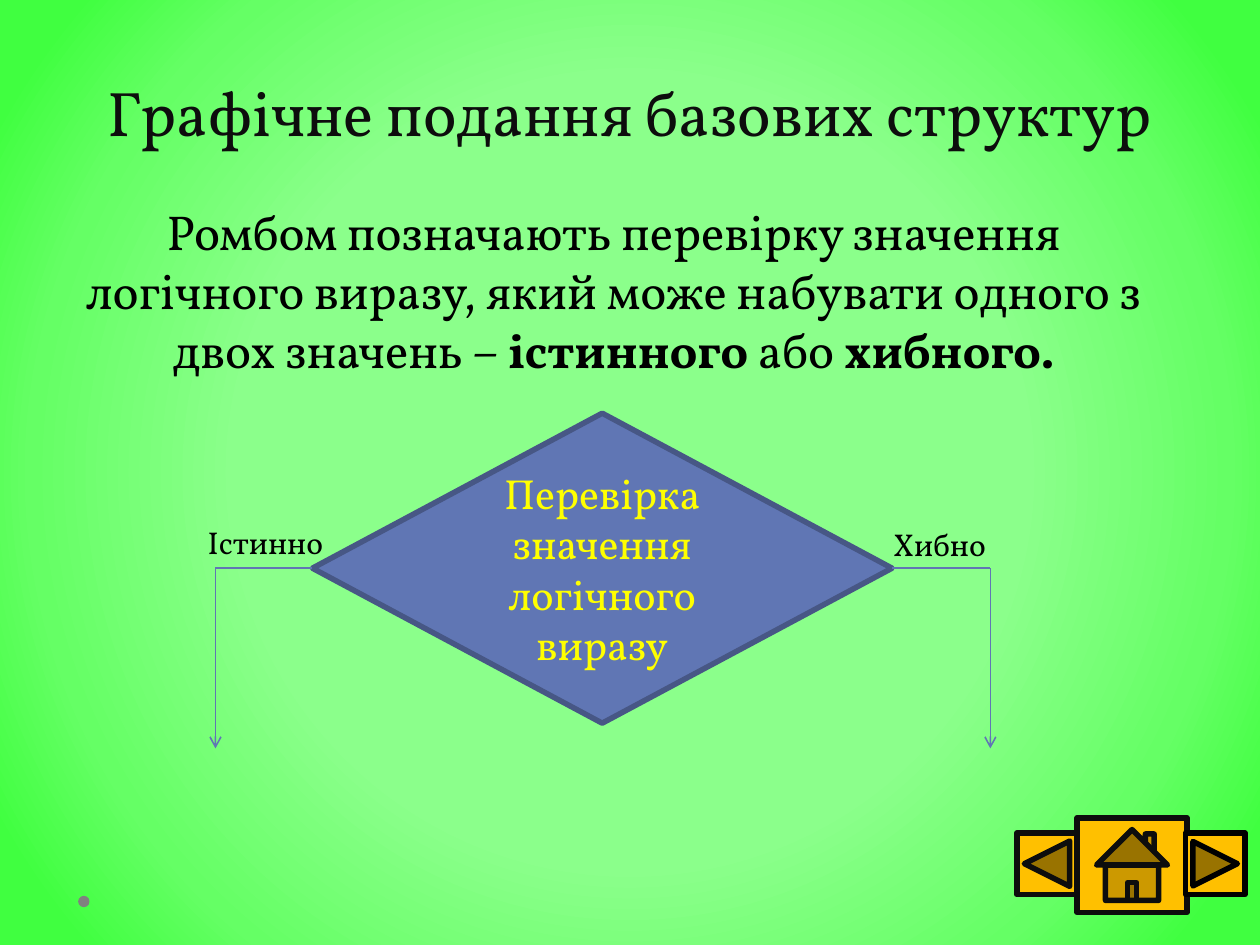
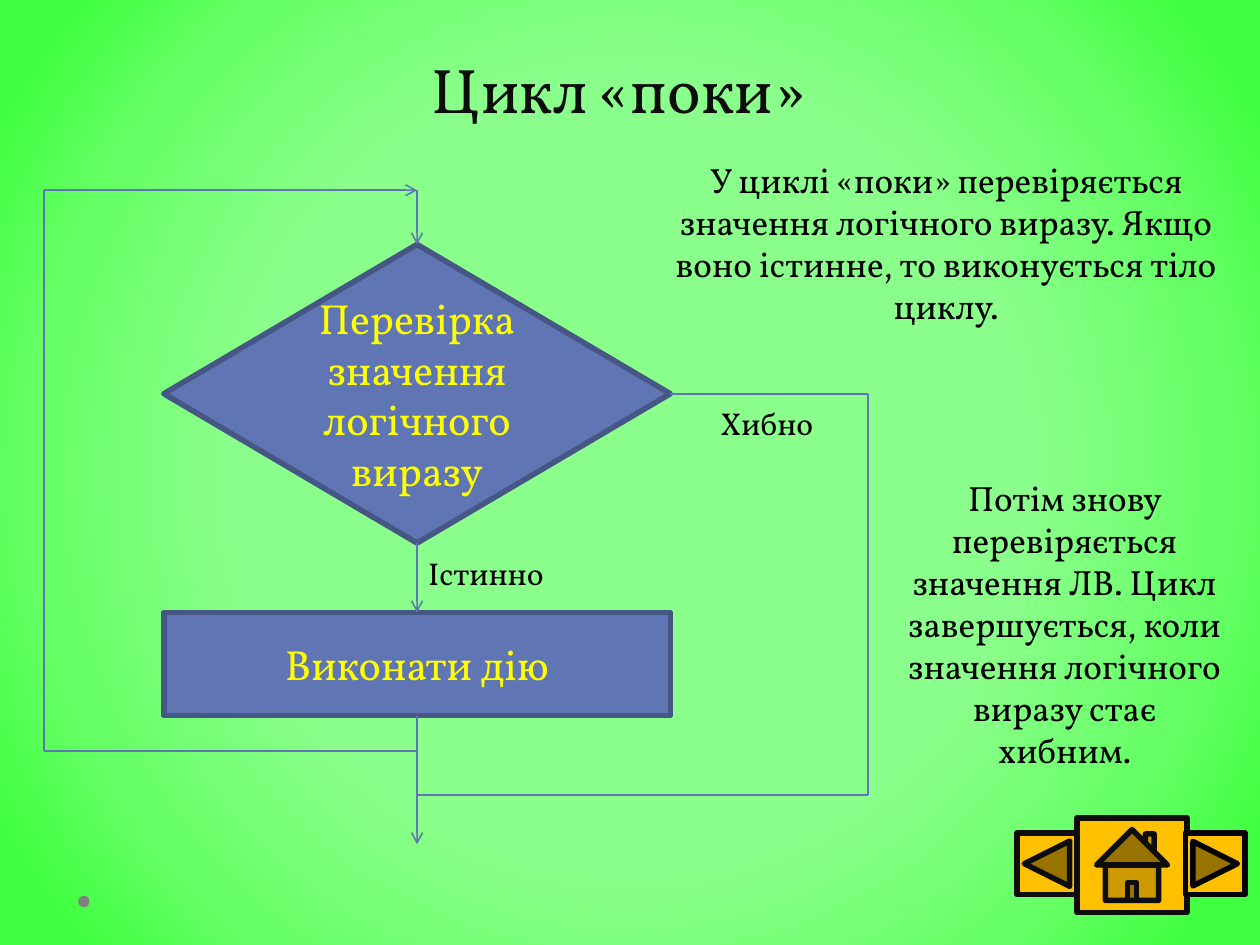
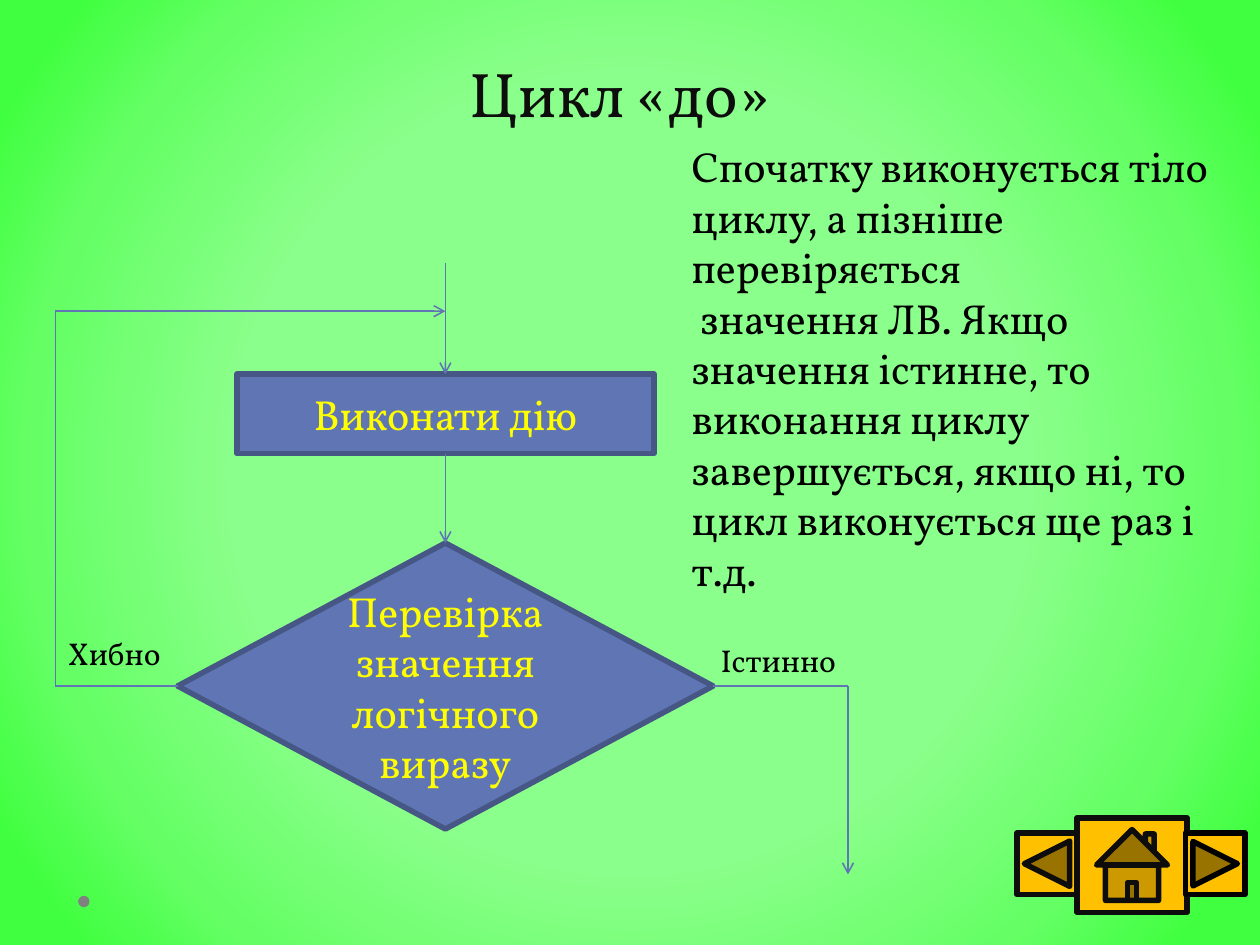
from collections import namedtuple
from itertools import pairwise

from pptx import Presentation
from pptx.dml.color import RGBColor
from pptx.enum.shapes import MSO_CONNECTOR, MSO_SHAPE as SHAPE
from pptx.enum.text import MSO_ANCHOR, MSO_AUTO_SIZE as FIT, PP_ALIGN as ALIGN
from pptx.oxml import parse_xml
from pptx.oxml.ns import nsdecls
from pptx.util import Inches, Pt

# The slide is a grid of 100 columns and 75 rows
COLS, ROWS = 100, 75
CELL = Inches(0.1)
FONT = "Vollkorn"
BLACK, INK, BLUE, EDGE = "000000", "0D0D0D", "6076B4", "475785"
YELLOW, GOLD, GREY = "FFFF00", "FFC000", "808080"
GLOW = {50: "8BFF8B", 76: "65FF65", 92: "40FF40"}
TOP, LEFT, BOTTOM, RIGHT = range(4)
OUTLINE, THIN = 3.15, 0.9
CHECK, ACTION = "Перевірка значення логічного виразу", "Виконати дію"
YES, NO = "Істинно", "Хибно"

Stop = namedtuple("Stop", "x y shape site", defaults=(None, None))


class Box(namedtuple("Box", "x y w h")):
    """An area of the grid, measured in cells."""

    def inner(self, x, y, w, h):
        return Box(self.x + x, self.y + y, w, h)

    def stop(self, x, y):
        return Stop(self.x + x, self.y + y)

    def emu(self):
        return [cells(v) for v in self]


def cells(n):
    return round(n * CELL)


def rgb(value):
    return RGBColor.from_string(value)


def apply(target, values):
    for name, value in values.items():
        setattr(target, name, value)


def write(p, text, size, color=BLACK, bold=False):
    r = p.add_run()
    r.text = text
    apply(r.font, {"name": FONT, "size": Pt(size), "bold": bold})
    r.font.color.rgb = rgb(color)


def add_block(slide, box, kind, fill, edge=None, text=None):
    sp = slide.shapes.add_shape(kind, *box.emu())
    sp.shadow.inherit = False
    sp.fill.solid()
    sp.fill.fore_color.rgb = rgb(fill)
    if edge:
        sp.line.color.rgb = rgb(edge)
        sp.line.width = Pt(OUTLINE)
    else:
        sp.line.fill.background()
    if text:
        p = sp.text_frame.paragraphs[0]
        p.alignment = ALIGN.CENTER
        write(p, text, 24, YELLOW)
    return sp


def add_check(slide, box):
    return add_block(slide, box, SHAPE.FLOWCHART_DECISION, BLUE, EDGE, CHECK)


def add_action(slide, box):
    return add_block(slide, box, SHAPE.RECTANGLE, BLUE, EDGE, ACTION)


def add_text(slide, box, paragraphs, size, align=ALIGN.LEFT, wrap=True):
    """Each paragraph is a list of (text, bold) pairs."""
    tf = slide.shapes.add_textbox(*box.emu()).text_frame
    apply(tf, {"word_wrap": wrap, "auto_size": FIT.SHAPE_TO_FIT_TEXT})
    for i, runs in enumerate(paragraphs):
        p = tf.add_paragraph() if i else tf.paragraphs[0]
        p.alignment = align
        for text, bold in runs:
            write(p, text, size, bold=bold)
    return tf


def add_label(slide, box, x, y, text):
    width = 11.2 if text == YES else 9.6
    add_text(slide, box.inner(x, y, width, 4), [[(text, False)]], 18, wrap=False)


def side(sp, site):
    """Stop at the middle of one side of a shape."""
    dx, dy = {TOP: (0.5, 0), LEFT: (0, 0.5), BOTTOM: (0.5, 1), RIGHT: (1, 0.5)}[site]
    return Stop((sp.left + dx * sp.width) / CELL, (sp.top + dy * sp.height) / CELL, sp, site)


def add_route(slide, *stops, arrow=True):
    """Straight lines from stop to stop, with an arrowhead on the last."""
    for a, b in pairwise(stops):
        ends = [cells(v) for v in (a.x, a.y, b.x, b.y)]
        line = slide.shapes.add_connector(MSO_CONNECTOR.STRAIGHT, *ends)
        line.line.color.rgb = rgb(BLUE)
        line.line.width = Pt(THIN)
        if a.shape is not None:
            line.begin_connect(a.shape, a.site)
        if b.shape is not None:
            line.end_connect(b.shape, b.site)
        props = line._element.spPr
        if arrow and b is stops[-1]:
            props.find("{*}ln").append(parse_xml(f'<a:tailEnd {nsdecls("a")} type="arrow"/>'))
        props.append(parse_xml(f'<a:effectLst {nsdecls("a")}/>'))


def set_background(master):
    master.background.fill.solid()
    stops = "".join(f'<a:gs pos="{pos * 1000}"><a:srgbClr val="{color}"/></a:gs>'
                    for pos, color in GLOW.items())
    glow = parse_xml(
        f'<a:gradFill {nsdecls("a")} rotWithShape="1"><a:gsLst>{stops}</a:gsLst>'
        '<a:path path="circle"><a:fillToRect l="50000" t="50000" r="50000" b="50000"/>'
        '</a:path></a:gradFill>')
    props = master.element.cSld.bg.bgPr
    props.replace(props[0], glow)


def add_navigation(slide, box):
    for kind, place, edge in (
            (SHAPE.ACTION_BUTTON_BACK_OR_PREVIOUS, (0, 1.2, 4.8, 4.9), INK),
            (SHAPE.ACTION_BUTTON_HOME, (4.8, 0, 8.7, 7.5), INK),
            (SHAPE.ACTION_BUTTON_FORWARD_OR_NEXT, (13.4, 1.2, 4.7, 4.9), BLACK)):
        add_block(slide, box.inner(*place), kind, GOLD, edge)


def add_slide(prs, title, box):
    slide = prs.slides.add_slide(prs.slide_layouts.get_by_name("Title Only"))
    sp = slide.shapes.title
    apply(sp, dict(zip(("left", "top", "width", "height"), box.emu())))
    tf = sp.text_frame
    apply(tf, {"vertical_anchor": MSO_ANCHOR.BOTTOM, "word_wrap": True, "auto_size": FIT.NONE})
    p = tf.paragraphs[0]
    apply(p, {"alignment": ALIGN.CENTER, "line_spacing": Pt(58)})
    write(p, title, 36, INK)
    add_block(slide, Box(6.2, 71.1, 0.9, 0.9), SHAPE.OVAL, GREY)
    add_navigation(slide, Box(80.7, 64.9, 18.1, 7.5))
    return slide


def draw_condition(slide, box):
    check = add_check(slide, box.inner(9.3, 0, 46, 24.6))
    for site, x in ((LEFT, 1.6), (RIGHT, 63.1)):
        add_route(slide, side(check, site), box.stop(x, 12.3), box.stop(x, 26.6))
    add_label(slide, box, 0, 8.2, YES)
    add_label(slide, box, 54.4, 8.4, NO)


def draw_while_loop(slide, box):
    """The check comes first, and the action leads back to it."""
    check = add_check(slide, box.inner(9.5, 4.3, 40.2, 23.7))
    action = add_action(slide, box.inner(9.5, 33.5, 40.2, 8.2))
    axis = 29.6
    entry = box.stop(axis, 0)
    add_route(slide, side(check, BOTTOM), side(action, TOP))
    add_route(slide, side(action, BOTTOM), box.stop(axis, 51.9))
    add_route(slide, box.stop(axis, 44.5), box.stop(0, 44.5), box.stop(0, 0), entry)
    add_route(slide, entry, side(check, TOP))
    add_route(slide, side(check, RIGHT), box.stop(65.4, 16.15), box.stop(65.4, 48),
              box.stop(axis, 48), arrow=False)
    add_label(slide, box, 29.5, 28.4, YES)
    add_label(slide, box, 52.7, 16.5, NO)


def draw_until_loop(slide, box):
    """The action comes first, and the check leads back to it."""
    action = add_action(slide, box.inner(14.4, 8.8, 33.1, 6.3))
    check = add_check(slide, box.inner(9.7, 22.2, 42.5, 22.7))
    axis, level = 30.95, 33.55
    add_route(slide, side(action, BOTTOM), side(check, TOP))
    add_route(slide, box.stop(axis, 0), side(action, TOP))
    add_route(slide, side(check, RIGHT), box.stop(62.9, level), box.stop(62.9, 48.5))
    add_route(slide, side(check, LEFT), box.stop(0, level), box.stop(0, 3.8),
              box.stop(axis, 3.8))
    add_label(slide, box, 0, 28.9, NO)
    add_label(slide, box, 51.8, 29.5, YES)


def build_condition_slide(prs):
    slide = add_slide(prs, "Графічне подання базових структур", Box(5, 0, 90, 12.3))
    add_text(slide, Box(5.5, 15.5, 86.4, 15.1), [[
        ("Ромбом позначають перевірку значення логічного виразу, "
         "який може набувати одного з двох значень – ", False),
        ("істинного", True), (" або ", False), ("хибного.", True)]], 28, ALIGN.CENTER)
    draw_condition(slide, Box(15.5, 32.8, 64, 26.6))


def build_while_slide(prs):
    slide = add_slide(prs, "Цикл «поки»", Box(4.1, 0, 90, 10.5))
    draw_while_loop(slide, Box(3.5, 15.1, 65.4, 51.9))
    for box, text in (
            (Box(52.5, 12.1, 45.2, 14.5),
             "У циклі «поки» перевіряється значення логічного виразу. "
             "Якщо воно істинне, то виконується тіло циклу."),
            (Box(70.8, 37.3, 27.4, 24.6),
             "Потім знову перевіряється значення ЛВ. Цикл завершується, "
             "коли значення логічного виразу стає хибним.")):
        add_text(slide, box, [[(text, False)]], 20, ALIGN.CENTER)


def build_until_slide(prs):
    slide = add_slide(prs, "Цикл «до»", Box(4.2, 2.1, 90, 8.7))
    draw_until_loop(slide, Box(4.4, 20.9, 62.9, 48.5))
    lines = ("Спочатку виконується тіло циклу, а пізніше перевіряється",
             "значення ЛВ. Якщо значення істинне, то виконання циклу",
             "завершується, якщо ні, то цикл виконується ще раз і т.д.")
    tf = add_text(slide, Box(53.9, 10.7, 45.8, 37.4), [[(t, False)] for t in lines], 24)
    tf.paragraphs[1]._p.get_or_add_pPr().set("indent", str(cells(0.7)))


def main():
    prs = Presentation()
    prs.slide_width, prs.slide_height = cells(COLS), cells(ROWS)
    set_background(prs.slide_master)
    build_condition_slide(prs)
    build_while_slide(prs)
    build_until_slide(prs)
    prs.save("out.pptx")


if __name__ == "__main__":
    main()
